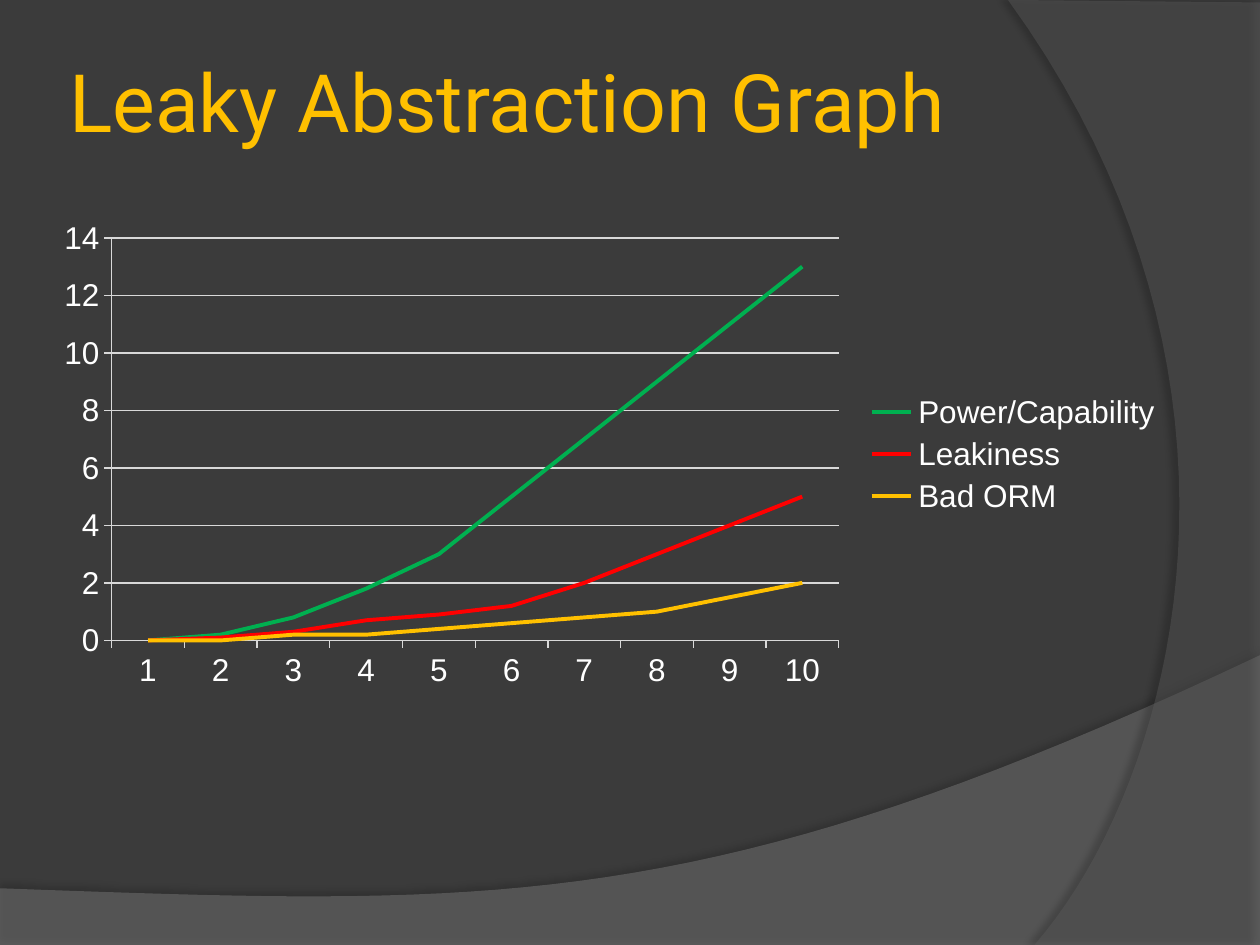
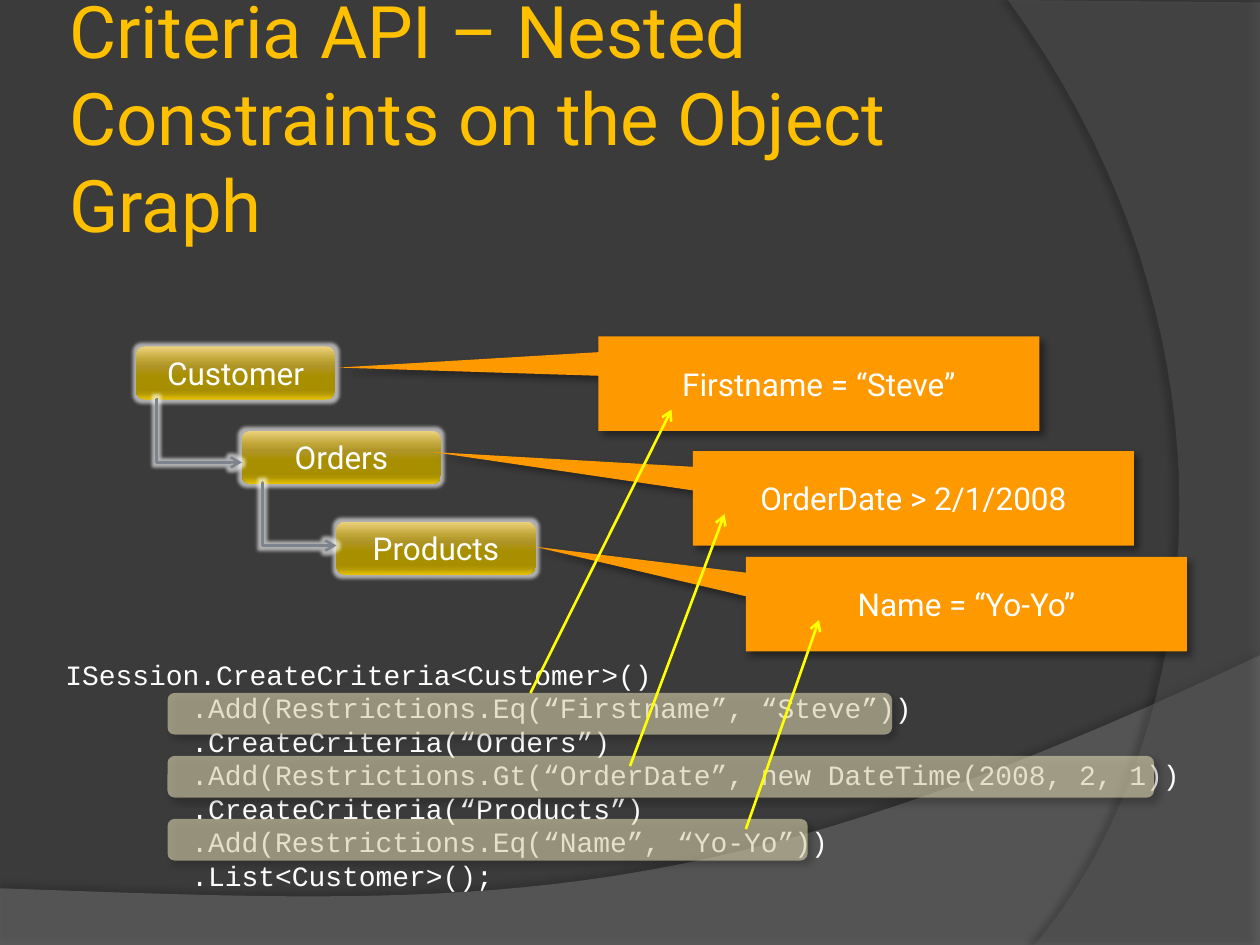
from lxml.etree import SubElement
from pptx import Presentation
from pptx.chart.data import CategoryChartData
from pptx.dml.color import RGBColor as Rgb
from pptx.enum.chart import XL_CHART_TYPE as Chart, XL_LEGEND_POSITION as Legend
from pptx.enum.chart import XL_TICK_MARK as Tick
from pptx.enum.shapes import MSO_CONNECTOR as Link, MSO_SHAPE as Kind
from pptx.enum.text import MSO_ANCHOR as Anchor, PP_ALIGN as Align
from pptx.oxml.ns import qn
from pptx.util import Inches, Pt

BACK = Rgb(0x3B, 0x3B, 0x3B)
SWOOSH = Rgb(0x7F, 0x7F, 0x7F)
ARC = Rgb(0x5E, 0x5E, 0x5E)
WHITE = Rgb(0xFF, 0xFF, 0xFF)
BLACK = Rgb(0, 0, 0)
AMBER = Rgb(0xFF, 0xC0, 0x00)
ORANGE = Rgb(0xFF, 0x99, 0x00)
GREEN = Rgb(0x00, 0xB0, 0x50)
RED = Rgb(0xFF, 0x00, 0x00)
YELLOW = Rgb(0xFF, 0xFF, 0x00)
CREAM = Rgb(0xFC, 0xF4, 0xC7)
STEEL = Rgb(0x7E, 0x84, 0x8D)
GRID = Rgb(0xD9, 0xD9, 0xD9)
GOLD = [(0, "EED27E"), (25, "BFA536"), (38, "AF9527"), (55, "A88F00"),
        (80, "A68D00"), (88, "AF9500"), (100, "E6C100")]
SANS, MONO, PLOT = "Roboto", "Courier New", "Arial"


def node(parent, tag, **attrs):
    return SubElement(parent, qn(tag), {k: str(v) for k, v in attrs.items()})


def tint(parent, color, alpha):
    """Add a colour of alpha percent opacity."""
    node(node(parent, "a:srgbClr", val=color), "a:alpha", val=alpha * 1000)


def bezier(a, b, c, d, steps=40):
    """Points after a on the cubic curve from a to d."""
    for i in range(1, steps + 1):
        t = i / steps
        u = 1 - t
        yield tuple(u**3 * p + 3 * u * u * t * q + 3 * u * t * t * r + t**3 * s
                    for p, q, r, s in zip(a, b, c, d))


class Deck:
    """Holds the style and the slide being drawn."""

    def __init__(self):
        self.file = Presentation()
        self.file.slide_width, self.file.slide_height = Inches(10), Inches(7.5)

    def slide(self, title, top, size):
        page = self.file.slides.add_slide(self.file.slide_layouts[6])
        page.background.fill.solid()
        page.background.fill.fore_color.rgb = BACK
        self.shapes = page.shapes
        low = bezier((10, 5.2), (5.59, 7.29), (3.91, 7.19), (0, 7.05))
        self.band([(0, 7.05), (0, 7.51), (10, 7.51), (10, 5.2), *low],
                  SWOOSH, 45, (35, 3.5, 270))
        side = bezier((8.21, 7.5), (9.35, 6.19), (10.18, 3), (8, 0))
        self.band([(10, 0.02), (10, 7.5), (8.21, 7.5), *side],
                  ARC, 40, (45, 4, 180))
        self.heading = title, top, size

    def band(self, points, color, alpha, shade):
        start, *rest = [(Inches(x), Inches(y)) for x, y in points]
        path = self.shapes.build_freeform(*start)
        path.add_line_segments(rest)
        self.paint(path.convert_to_shape(), color, alpha, shade)

    def paint(self, shape, color, alpha=100, shade=(40, 3, 45)):
        """Fill without outline; shade is opacity, distance and direction."""
        shape.fill.solid()
        shape.fill.fore_color.rgb = color
        shape.line.fill.background()
        props = shape.element.spPr
        if alpha < 100:
            node(props.find(qn("a:solidFill"))[0], "a:alpha", val=alpha * 1000)
        shape.shadow.inherit = False
        dark, dist, angle = shade
        drop = node(props.find(qn("a:effectLst")), "a:outerShdw", blurRad=Pt(4),
                    dist=Pt(dist), dir=angle * 60000, rotWithShape=0)
        tint(drop, BLACK, dark)

    def glow(self, effects):
        tint(node(effects, "a:glow", rad=Pt(4)), WHITE, 60)

    def style(self, para, size, color=WHITE, face=SANS):
        para.font.size, para.font.name = Pt(size), face
        para.font.color.rgb = color

    def text(self, left, top, width, height):
        box = self.shapes.add_textbox(*map(Inches, (left, top, width, height)))
        box.text_frame.word_wrap = True
        return box.text_frame

    def title(self):
        words, top, size = self.heading
        frame = self.text(0.5, top, 8.17, 1.25)
        frame.margin_left = frame.margin_right = Inches(0.05)
        frame.vertical_anchor = Anchor.MIDDLE
        frame.text = words
        self.style(frame.paragraphs[0], size, AMBER)

    def code(self, head, calls):
        frame = self.text(0.42, 5.17, 9.42, 1.99)
        frame.text = "\n".join([head, *calls])
        for i, para in enumerate(frame.paragraphs):
            self.style(para, 16, face=MONO)
            para.line_spacing = Pt(19.1)
            if i:
                para._p.get_or_add_pPr().set("marL", str(Inches(1)))

    def shape(self, kind, left, top, width, height, words=""):
        shape = self.shapes.add_shape(
            kind, *map(Inches, (left, top, width, height)))
        if words:
            frame = shape.text_frame
            frame.text, frame.vertical_anchor = words, Anchor.MIDDLE
            frame.paragraphs[0].alignment = Align.CENTER
            self.style(frame.paragraphs[0], 18)
        return shape

    def mark(self, top, width):
        self.paint(self.shape(Kind.ROUNDED_RECTANGLE, 1.33, top, width, 0.33),
                   CREAM, 50)

    def entity(self, words, left, top):
        box = self.shape(Kind.ROUNDED_RECTANGLE, left, top, 1.58, 0.42, words)
        box.fill.gradient()
        box.fill.gradient_angle = 270
        box.line.fill.background()
        props = box.element.spPr
        stops = props.find(".//" + qn("a:gsLst"))
        stops.clear()
        for at, color in GOLD:
            node(node(stops, "a:gs", pos=at * 1000), "a:srgbClr", val=color)
        box.shadow.inherit = False
        self.glow(props.find(qn("a:effectLst")))

    def callout(self, words, left, top, tip):
        box = self.shape(Kind.RECTANGULAR_CALLOUT, left, top, 3.5, 0.75, words)
        box.adjustments[0], box.adjustments[1] = tip
        self.paint(box, ORANGE)

    def arrow(self, start, end, color, bend=None):
        """Draw an arrow; bend is where an elbow turns, as a share of width."""
        kind = Link.STRAIGHT if bend is None else Link.ELBOW
        line = self.shapes.add_connector(kind, *map(Inches, start + end))
        line.line.color.rgb, line.line.width = color, Pt(1.5)
        props = line.element.spPr
        node(props.find(qn("a:ln")), "a:tailEnd", type="arrow")
        effects = node(props, "a:effectLst")
        if bend is not None:
            shape = props.find(qn("a:prstGeom"))
            guides = shape.find(qn("a:avLst"))
            if guides is None:
                guides = node(shape, "a:avLst")
            node(guides, "a:gd", name="adj1", fmla=f"val {round(bend * 100000)}")
            self.glow(effects)

    def chart(self, cats, series):
        data = CategoryChartData()
        data.categories = cats
        for name, _, values in series:
            data.add_series(name, values)
        chart = self.shapes.add_chart(
            Chart.LINE, *map(Inches, (0.33, 1.67, 9, 3.87)), data).chart
        chart.has_title = False
        chart.font.size, chart.font.name = Pt(18), PLOT
        chart.font.color.rgb = WHITE
        chart.has_legend = True
        chart.legend.position = Legend.RIGHT
        chart.legend.include_in_layout = False
        plot = chart.plots[0]
        plot.vary_by_categories = False
        for line, (_, color, _) in zip(plot.series, series):
            line.smooth = False
            line.format.line.color.rgb = color
            line.format.line.width = Pt(2.25)
        value, category = chart.value_axis, chart.category_axis
        value.has_major_gridlines = True
        for axis in (value, category):
            axis.major_tick_mark = Tick.OUTSIDE
            axis.minor_tick_mark = Tick.NONE
        for part in (value, category, value.major_gridlines):
            part.format.line.color.rgb = GRID
            part.format.line.width = Pt(0.75)


def leaks(deck):
    deck.slide("Leaky Abstraction Graph", 0.17, 46)
    deck.chart([str(n) for n in range(1, 11)], [
        ("Power/Capability", GREEN, (0, 0.2, 0.8, 1.8, 3, 5, 7, 9, 11, 13)),
        ("Leakiness", RED, (0, 0.1, 0.3, 0.7, 0.9, 1.2, 2, 3, 4, 5)),
        ("Bad ORM", AMBER, (0, 0, 0.2, 0.2, 0.4, 0.6, 0.8, 1, 1.5, 2)),
    ])
    deck.title()


def criteria(deck):
    deck.slide("Criteria API – Nested Constraints on the Object Graph", 0.3, 41.4)
    deck.code("ISession.CreateCriteria<Customer>()", [
        ".Add(Restrictions.Eq(“Firstname”, “Steve”))",
        ".CreateCriteria(“Orders”)",
        ".Add(Restrictions.Gt(“OrderDate”, new DateTime(2008, 2, 1))",
        ".CreateCriteria(“Products”)",
        ".Add(Restrictions.Eq(“Name”, “Yo-Yo”))",
        ".List<Customer>();",
    ])
    for top, width in ((6.5, 5.08), (6, 7.83), (5.5, 5.75)):
        deck.mark(top, width)
    deck.title()
    for words, left, top in (("Customer", 1.08, 2.75), ("Orders", 1.92, 3.42),
                             ("Products", 2.67, 4.14)):
        deck.entity(words, left, top)
    deck.arrow((1.25, 3.17), (1.92, 3.67), STEEL, -0.01)
    deck.arrow((2.08, 3.83), (2.67, 4.33), STEEL, 0.01)
    for words, left, top, tip in (
            ("Firstname = “Steve”", 4.75, 2.67, (-1.09, -0.17)),
            ("OrderDate > 2/1/2008", 5.5, 3.58, (-1.09, -0.49)),
            ("Name = “Yo-Yo”", 5.92, 4.42, (-0.98, -0.61))):
        deck.callout(words, left, top, tip)
    for start, end in (((4.21, 5.5), (5.33, 3.25)), ((5, 6.08), (5.75, 4.08)),
                       ((5.92, 6.58), (6.5, 4.92))):
        deck.arrow(start, end, YELLOW)


def main():
    deck = Deck()
    leaks(deck)
    criteria(deck)
    deck.file.save("out.pptx")


if __name__ == "__main__":
    main()
